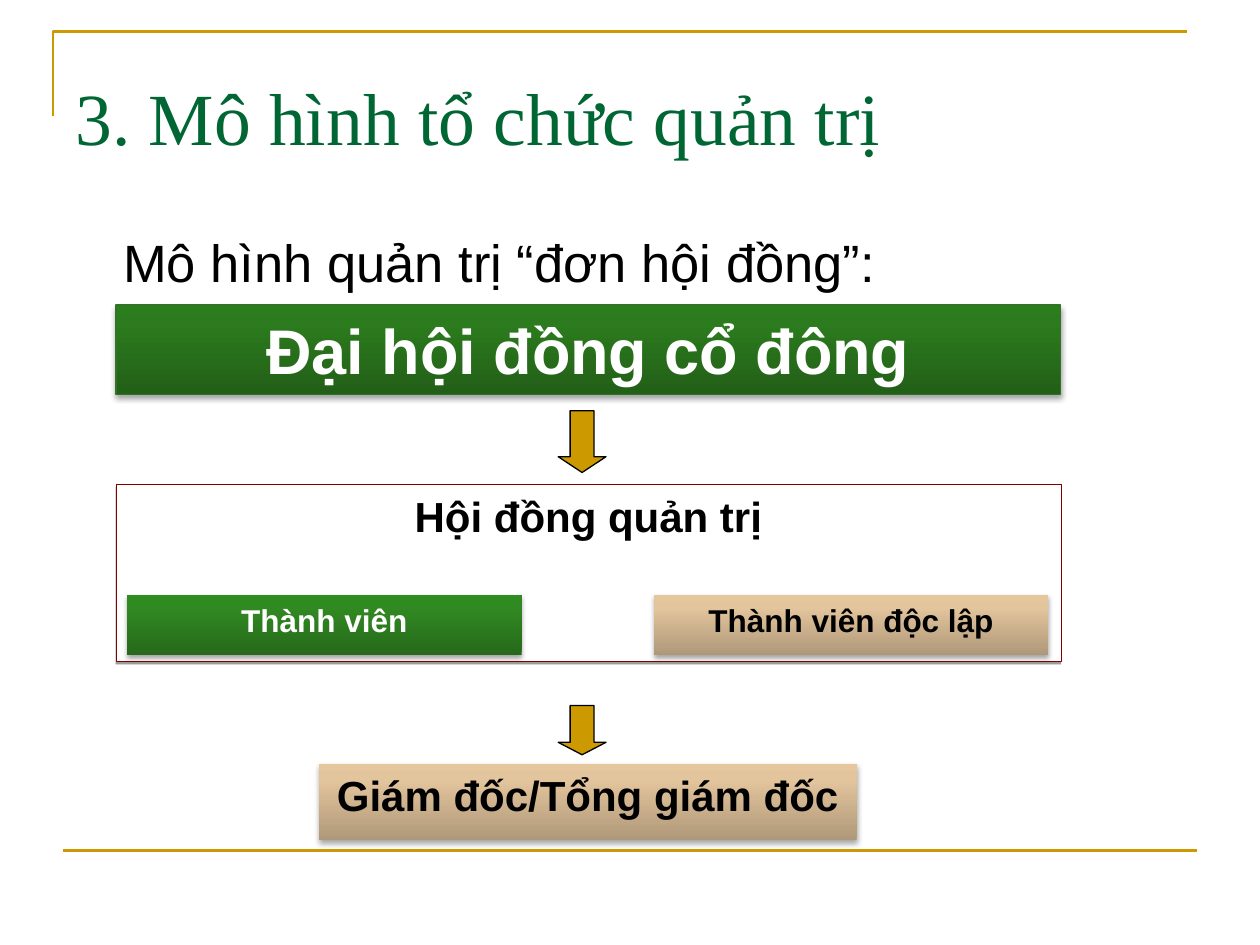
from copy import deepcopy

from lxml import etree
from pptx import Presentation
from pptx.dml.color import RGBColor
from pptx.enum.shapes import MSO_CONNECTOR, MSO_SHAPE
from pptx.enum.text import MSO_ANCHOR, PP_ALIGN
from pptx.oxml.ns import qn
from pptx.util import Inches, Pt

RECTANGLE, DOWN_ARROW = MSO_SHAPE.RECTANGLE, MSO_SHAPE.DOWN_ARROW
STRAIGHT = MSO_CONNECTOR.STRAIGHT
TOP, MIDDLE = MSO_ANCHOR.TOP, MSO_ANCHOR.MIDDLE
LEFT, CENTER = PP_ALIGN.LEFT, PP_ALIGN.CENTER

COLORS = {
    "gold": "CC9900", "title": "006633", "black": "000000", "white": "FFFFFF",
    "green line": "337327", "maroon": "800000",
}
COLORS = {name: RGBColor.from_string(value) for name, value in COLORS.items()}
STOPS = (0, 0.8, 1)
GRADIENTS = {
    "green": ("225F17", "2C7B1E", "2B7E1C"),
    "light green": ("26691A", "318922", "308C20"),
    "tan": ("AF9879", "E3C59D", "E6C69C"),
}


def write(shape, text, size, color="black", font="Arial", bold=False,
          align=LEFT, anchor=TOP):
    frame = shape.text_frame
    frame.word_wrap = True
    frame.vertical_anchor = anchor
    para = frame.paragraphs[0]
    para.alignment = align
    span = para.add_run()
    span.text = text
    span.font.size = Pt(size)
    span.font.name = font
    span.font.bold = bold
    span.font.color.rgb = COLORS[color]


def add_shadow(shape, opacity, blur, distance):
    """Cast a black shadow straight down; opacity in percent, lengths in points."""
    shape.shadow.inherit = False
    effects = shape._element.spPr.find(qn("a:effectLst"))
    shadow = etree.SubElement(
        effects, qn("a:outerShdw"), blurRad=str(Pt(blur)), dist=str(Pt(distance)),
        dir="5400000", rotWithShape="0")
    color = etree.SubElement(shadow, qn("a:srgbClr"), val="000000")
    etree.SubElement(color, qn("a:alpha"), val=str(opacity * 1000))


deck = Presentation()
deck.slide_width, deck.slide_height = Inches(10), Inches(7.5)
page = deck.slides.add_slide(deck.slide_layouts[6])
shapes = page.shapes

# Frame lines
builder = shapes.build_freeform(Inches(0.42), Inches(0.92))
builder.add_line_segments(
    [(Inches(0.42), Inches(0.25)), (Inches(9.42), Inches(0.25))], close=False)
corner = builder.convert_to_shape()
corner.fill.background()
corner.shadow.inherit = False
footer = shapes.add_connector(
    STRAIGHT, Inches(0.5), Inches(6.75), Inches(9.5), Inches(6.75))
etree.SubElement(footer._element.spPr, qn("a:effectLst"))
for rule in (corner, footer):
    rule.line.color.rgb = COLORS["gold"]
    rule.line.width = Pt(1.5)

# Heading and introduction
title = shapes.add_textbox(Inches(0.5), Inches(0.3), Inches(9), Inches(1.25))
write(title, "3. Mô hình tổ chức quản trị", 42, color="title",
      font="Times New Roman", anchor=MIDDLE)
intro = shapes.add_textbox(Inches(0.88), Inches(1.78), Inches(8.62), Inches(0.6))
write(intro, "Mô hình quản trị “đơn hội đồng”:", 30)

# Governance bodies: text, left, top, width, height, size, text color, fill, line, width
BODIES = [
    ("Đại hội đồng cổ đông", 0.92, 2.42, 7.5, 0.71, 36, "white", "green", "green line", 0.75),
    ("Hội đồng quản trị", 0.92, 3.84, 7.5, 1.41, 24, "black", None, "maroon", 0.25),
    ("Giám đốc/Tổng giám đốc", 2.53, 6.06, 4.27, 0.61, 24, "black", "tan", None, 0),
    ("Thành viên", 1.01, 4.72, 3.13, 0.48, 18, "white", "light green", None, 0),
    ("Thành viên độc lập", 5.19, 4.72, 3.13, 0.48, 18, "black", "tan", None, 0),
]
for text, left, top, width, height, size, color, gradient, line, weight in BODIES:
    box = shapes.add_shape(
        RECTANGLE, Inches(left), Inches(top), Inches(width), Inches(height))
    if gradient:
        box.fill.gradient()
        box.fill.gradient_angle = 90
        stop_list = box._element.spPr.find(qn("a:gradFill")).find(qn("a:gsLst"))
        stop_list.append(deepcopy(stop_list[-1]))
        for stop, position, value in zip(
                box.fill.gradient_stops, STOPS, GRADIENTS[gradient]):
            stop.position = position
            stop.color.rgb = RGBColor.from_string(value)
        add_shadow(box, 35, 3.1, 1.8)
    else:
        box.fill.solid()
        box.fill.fore_color.rgb = COLORS["white"]
        add_shadow(box, 38, 0, 1.6)
    if line:
        box.line.color.rgb = COLORS[line]
        box.line.width = Pt(weight)
    else:
        box.line.fill.background()
    write(box, text, size, color=color, bold=True, align=CENTER)

# Arrows between the levels
for top, height, head in ((3.26, 0.49, 0.33), (5.6, 0.39, 0.26)):
    arrow = shapes.add_shape(
        DOWN_ARROW, Inches(4.43), Inches(top), Inches(0.38), Inches(height))
    arrow.adjustments[1] = head
    arrow.fill.solid()
    arrow.fill.fore_color.rgb = COLORS["gold"]
    arrow.line.color.rgb = COLORS["black"]
    arrow.line.width = Pt(0.75)
    arrow.shadow.inherit = False

deck.save("out.pptx")
